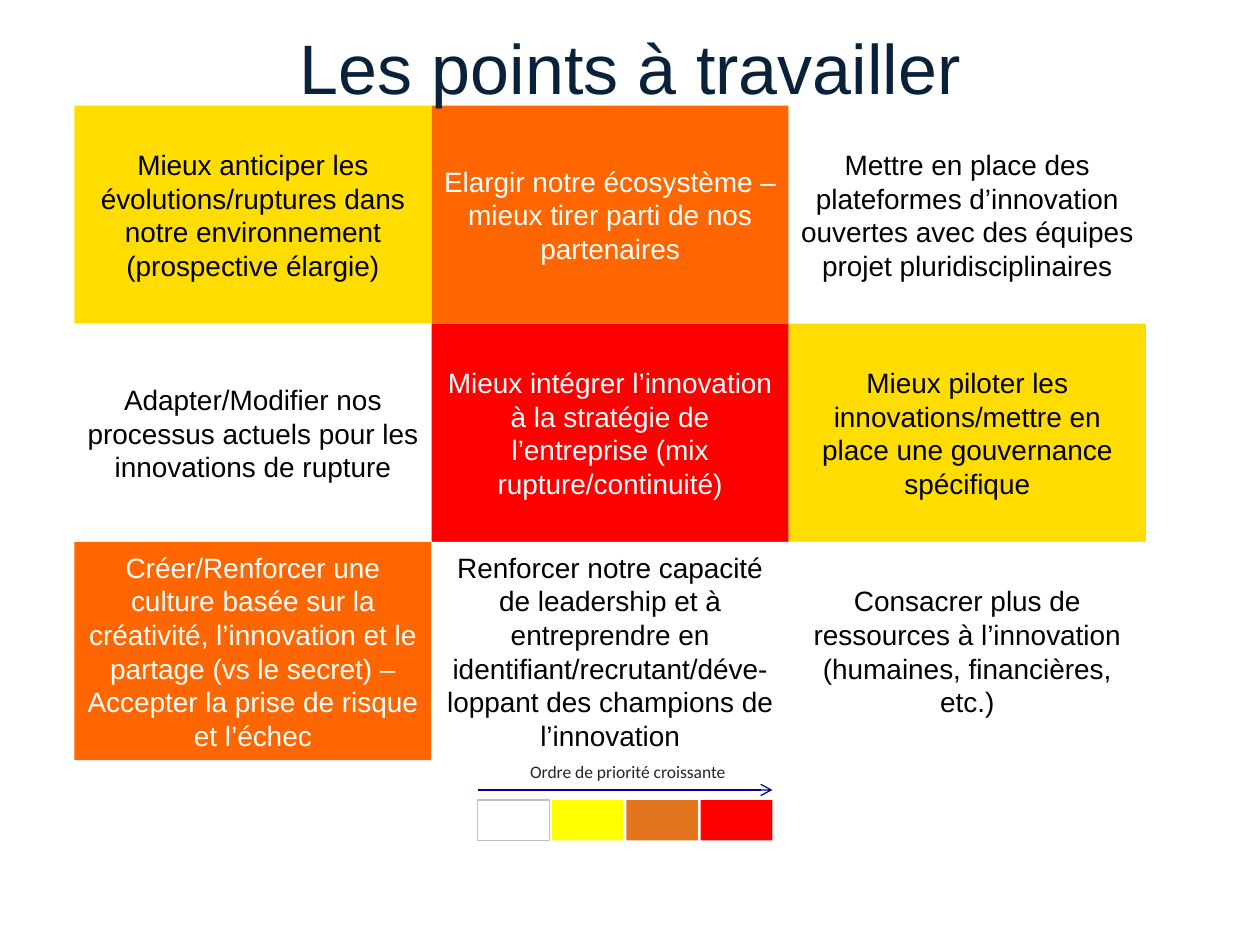
from pptx import Presentation
from pptx.dml.color import RGBColor as RGB
from pptx.enum.shapes import MSO_CONNECTOR as Conn, MSO_SHAPE as Shape
from pptx.enum.text import MSO_ANCHOR as Anchor, PP_ALIGN as Align
from pptx.oxml.xmlchemy import OxmlElement as Elem
from pptx.util import Pt

WHITE = RGB(0xFF, 0xFF, 0xFF)
BLACK = RGB(0, 0, 0)
GOLD = RGB(0xFF, 0xDD, 0x00)
ORANGE = RGB(0xFF, 0x66, 0x00)
RED = RGB(0xFF, 0, 0)
YELLOW = RGB(0xFF, 0xFF, 0)
RUST = RGB(0xE2, 0x75, 0x1D)
GREY = RGB(0xBF, 0xBF, 0xBF)
DARK = RGB(0x26, 0x26, 0x26)
BLUE = RGB(0x00, 0x02, 0x87)
NAVY = RGB(0x09, 0x21, 0x3B)


class Board:
    font = "Arial"
    size = 16

    def __init__(self, slide):
        self.slide = slide

    def words(self, shape, text, color, size=None, font=None, align=Align.CENTER):
        frame = shape.text_frame
        frame.word_wrap = True
        frame.vertical_anchor = Anchor.MIDDLE
        par = frame.paragraphs[0]
        par.text = text
        par.alignment = align
        par.font.name = font or self.font
        par.font.size = Pt(size or self.size)
        par.font.color.rgb = color
        return frame

    def rect(self, x, y, w, h, fill, line=None):
        box = self.slide.shapes.add_shape(Shape.RECTANGLE, Pt(x), Pt(y), Pt(w), Pt(h))
        box.shadow.inherit = False
        box.fill.solid()
        box.fill.fore_color.rgb = fill
        if line:
            box.line.color.rgb = line
            box.line.width = Pt(0.75)
        else:
            box.line.fill.background()
        return box

    def label(self, x, y, w, h, text, color, **style):
        box = self.slide.shapes.add_textbox(Pt(x), Pt(y), Pt(w), Pt(h))
        return self.words(box, text, color, **style)

    def arrow(self, x, y, end, color):
        link = self.slide.shapes.add_connector(Conn.STRAIGHT, Pt(x), Pt(y), Pt(end), Pt(y))
        link.line.color.rgb = color
        link.line.width = Pt(0.75)
        tip = Elem("a:tailEnd")
        tip.set("type", "arrow")
        link.get_or_add_ln().append(tip)
        link._element.spPr.append(Elem("a:effectLst"))


deck = Presentation()
deck.slide_width, deck.slide_height = Pt(720), Pt(540)
board = Board(deck.slides.add_slide(deck.slide_layouts[6]))

# Priority legend
LEFT, STEP, CHIP = 272.9, 42.5, 41
for i, fill in enumerate((WHITE, YELLOW, RUST, RED)):
    board.rect(LEFT + i * STEP, 457.2, CHIP, 23, fill, GREY if fill == WHITE else None)
board.arrow(LEFT, 451.4, LEFT + 3 * STEP + CHIP, BLUE)
key = board.label(295.9, 431.3, 128, 19.4, "Ordre de priorité croissante", DARK,
                  size=10, font="Calibri", align=Align.LEFT)
key.word_wrap = False

# Grid of topics
TOPICS = [
    [("Mieux anticiper les évolutions/ruptures dans notre environnement "
      "(prospective élargie)", GOLD),
     ("Elargir notre écosystème – mieux tirer parti de nos partenaires", ORANGE),
     ("Mettre en place des plateformes d’innovation ouvertes avec des équipes "
      "projet pluridisciplinaires", WHITE)],
    [("Adapter/Modifier nos processus actuels pour les innovations de rupture", WHITE),
     ("Mieux intégrer l’innovation à la stratégie de l’entreprise "
      "(mix rupture/continuité)", RED),
     ("Mieux piloter les innovations/mettre en place une gouvernance spécifique", GOLD)],
    [("Créer/Renforcer une culture basée sur la créativité, l’innovation et le partage "
      "(vs le secret) – Accepter la prise de risque et l’échec", ORANGE),
     ("Renforcer notre capacité de leadership et à entreprendre en "
      "identifiant/recrutant/déve-loppant des champions de l’innovation", WHITE),
     ("Consacrer plus de ressources à l’innovation (humaines, financières, etc.)", WHITE)],
]
WIDE, HIGH = 204.1, 124.7
for r, row in enumerate(TOPICS):
    for c, (text, fill) in enumerate(row):
        cell = board.rect(42.5 + c * WIDE, 60.3 + r * HIGH, WIDE, HIGH, fill)
        board.words(cell, text, WHITE if fill in (ORANGE, RED) else BLACK)

# Title
board.label(54, 17.3, 612, 41.8, "Les points à travailler", NAVY, size=40)

deck.save("out.pptx")
